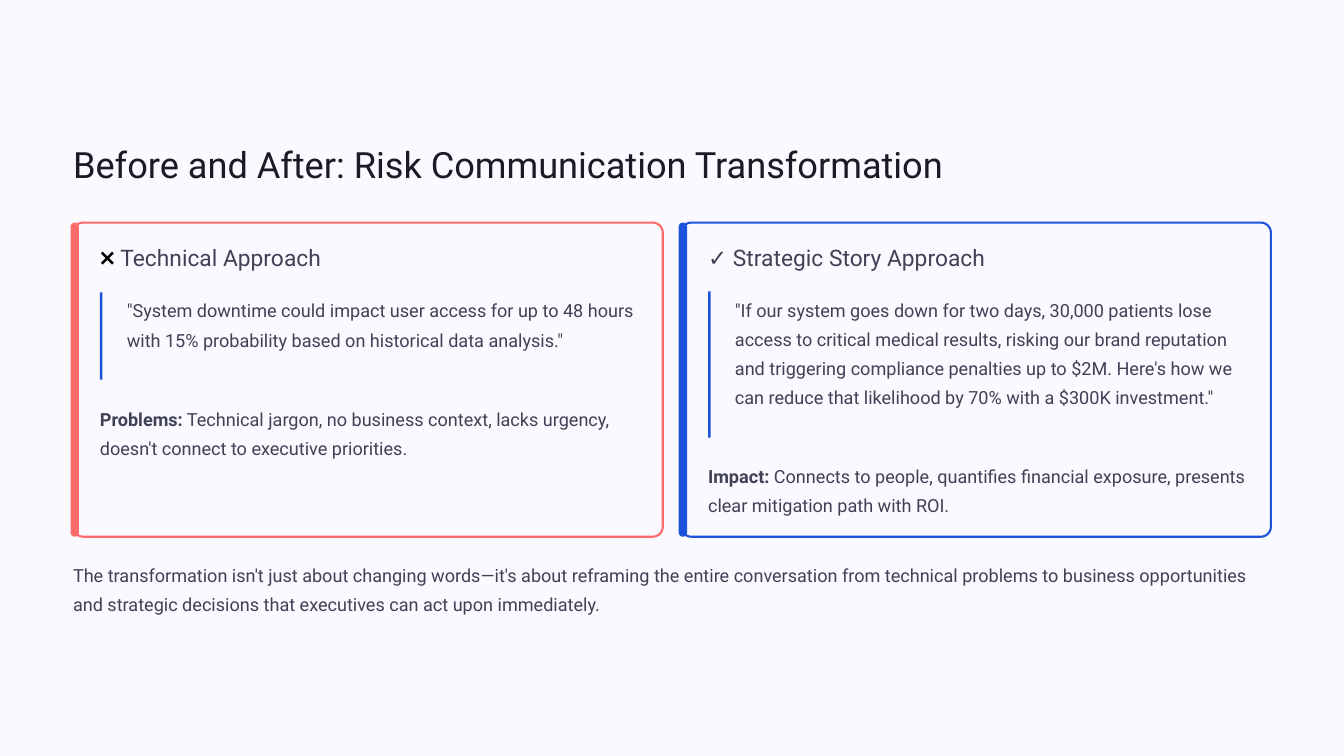
import pptx
import pptx.util
import pptx.dml.color
import pptx.enum.shapes
from pptx.util import Inches

FONT = "Roboto"
PAGE, TITLE_INK, BODY_INK, BLACK = "F9F9FF", "1B1B27", "404155", "000000"
RED, BLUE = "FF6B6B", "1B54DA"

TITLE = {"size": 31, "leading": 39}
HEADING = {"size": 19.5, "leading": 24}
BODY = {"size": 15.5, "leading": 25}

MARGIN = 0.87
CARD_TOP, CARD_WIDTH, CARD_HEIGHT, CARD_STEP = 2.65, 7.02, 3.74, 7.24
CARD_PADDING, QUOTE_INDENT = 0.32, 0.32
INNER_WIDTH = 6.46

RECT = pptx.enum.shapes.MSO_SHAPE.RECTANGLE
ROUNDED = pptx.enum.shapes.MSO_SHAPE.ROUNDED_RECTANGLE

# accent, heading runs, quote top, quote height, quote, verdict top, verdict runs
CARDS = [
    (RED, [("❌", BLACK, False), (" Technical Approach", BODY_INK, False)], 3.48, 1.04,
     '"System downtime could impact user access for up to 48 hours with 15% probability '
     'based on historical data analysis."',
     4.77, [("Problems:", BODY_INK, True),
            (" Technical jargon, no business context, lacks urgency, doesn't connect to "
             "executive priorities.", BODY_INK, False)]),
    (BLUE, [("✓ Strategic Story Approach", BODY_INK, False)], 3.47, 1.74,
     '"If our system goes down for two days, 30,000 patients lose access to critical medical '
     'results, risking our brand reputation and triggering compliance penalties up to $2M. '
     'Here\'s how we can reduce that likelihood by 70% with a $300K investment."',
     5.45, [("Impact:", BODY_INK, True),
            (" Connects to people, quantifies financial exposure, presents clear mitigation "
             "path with ROI.", BODY_INK, False)]),
]

CONCLUSION = (
    "The transformation isn't just about changing words—it's about reframing the entire "
    "conversation from technical problems to business opportunities and strategic decisions "
    "that executives can act upon immediately.")


def color(hex_code):
    return pptx.dml.color.RGBColor.from_string(hex_code)


def set_format(target, values):
    for name, value in values.items():
        setattr(target, name, value)


def add_panel(slide, kind, left, top, width, height, fill, outline=None, rounding=None):
    panel = slide.shapes.add_shape(
        kind, Inches(left), Inches(top), Inches(width), Inches(height))
    panel.shadow.inherit = False
    panel.fill.solid()
    panel.fill.fore_color.rgb = color(fill)
    if outline:
        panel.line.color.rgb = color(outline)
        panel.line.width = pptx.util.Pt(1.8)
    else:
        panel.line.fill.background()
    if rounding is not None:
        panel.adjustments[0] = rounding


def add_text(slide, left, top, width, height, runs, style, wrap=True):
    frame = slide.shapes.add_textbox(
        Inches(left), Inches(top), Inches(width), Inches(height)).text_frame
    set_format(frame, {"margin_left": 0, "margin_top": 0, "margin_right": 0,
                       "margin_bottom": 0, "word_wrap": wrap})
    paragraph = frame.paragraphs[0]
    paragraph.line_spacing = pptx.util.Pt(style["leading"])
    for words, ink, bold in runs:
        run = paragraph.add_run()
        run.text = words
        set_format(run.font, {"name": FONT, "size": pptx.util.Pt(style["size"]),
                              "bold": bold})
        run.font.color.rgb = color(ink)


def add_card(slide, left, accent, heading, quote_top, quote_height, quote,
             verdict_top, verdict):
    inner_left = left + CARD_PADDING
    # Outlined body with a thick accent edge
    add_panel(slide, ROUNDED, left, CARD_TOP, CARD_WIDTH, CARD_HEIGHT, PAGE, accent, 0.032)
    add_panel(slide, ROUNDED, left - 0.03, CARD_TOP, 0.1, CARD_HEIGHT, accent, rounding=0.5)
    add_text(slide, inner_left, 2.89, 3.66, 0.35, heading, HEADING, wrap=False)
    # Quote with its rule
    add_text(slide, inner_left + QUOTE_INDENT, quote_top, INNER_WIDTH - QUOTE_INDENT,
             quote_height, [(quote, BODY_INK, False)], BODY)
    add_panel(slide, RECT, inner_left, quote_top, 0.03, quote_height, BLUE)
    # Verdict
    add_text(slide, inner_left, verdict_top, INNER_WIDTH, 0.69, verdict, BODY)


def main():
    deck = pptx.Presentation()
    set_format(deck, {"slide_width": Inches(16), "slide_height": Inches(9)})
    slide = deck.slides.add_slide(deck.slide_layouts[6])
    slide.background.fill.solid()
    slide.background.fill.fore_color.rgb = color(PAGE)

    # Title
    add_text(slide, MARGIN, 1.67, 11.72, 0.54,
             [("Before and After: Risk Communication Transformation", TITLE_INK, False)],
             TITLE, wrap=False)

    # Before and after cards
    for column, card in enumerate(CARDS):
        add_card(slide, MARGIN + column * CARD_STEP, *card)

    # Conclusion
    add_text(slide, MARGIN, 6.63, 14.26, 0.69, [(CONCLUSION, BODY_INK, False)], BODY)

    deck.save("out.pptx")


if __name__ == "__main__":
    main()
